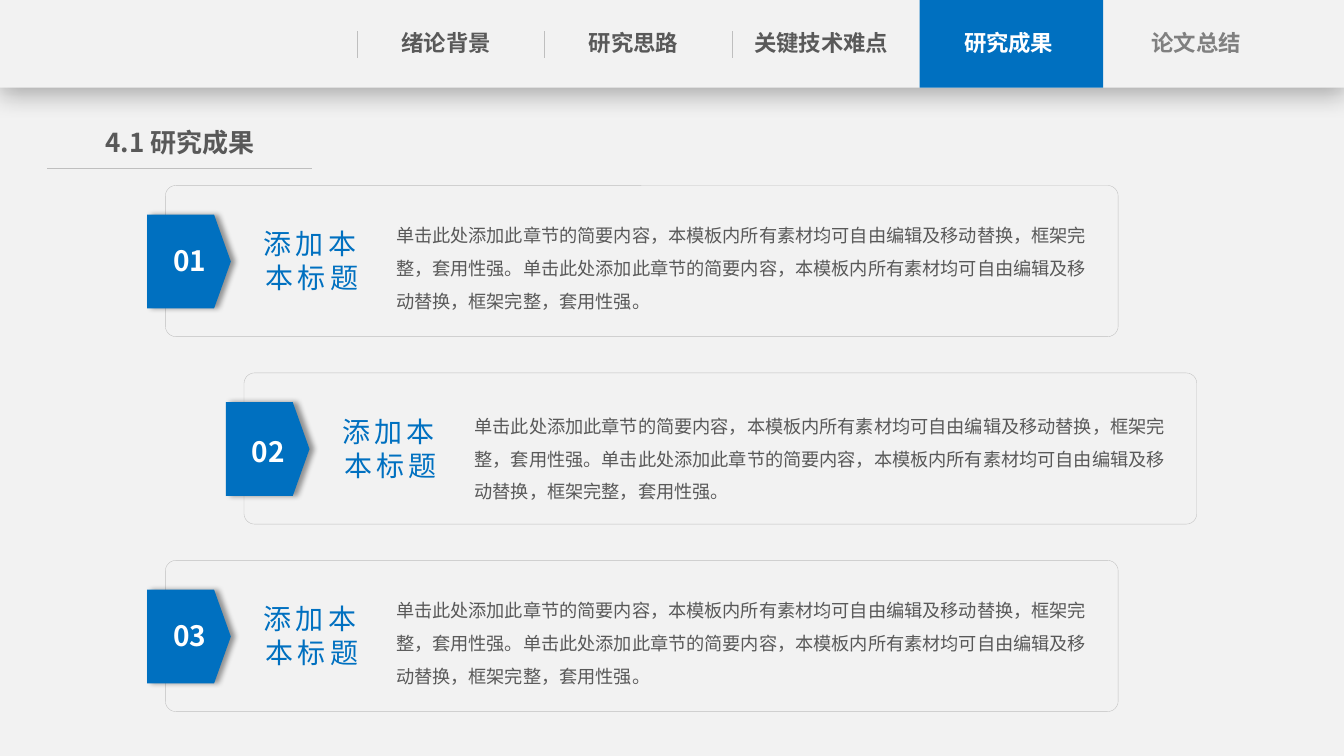
from dataclasses import dataclass

from lxml.etree import SubElement
from pptx import Presentation
from pptx.dml.color import RGBColor
from pptx.enum.shapes import MSO_CONNECTOR, MSO_SHAPE
from pptx.enum.text import MSO_ANCHOR, PP_ALIGN
from pptx.oxml.ns import qn
from pptx.util import Inches, Pt


@dataclass(frozen=True)
class Theme:
    face: str = "Noto Sans CJK SC"
    back: str = "F2F2F2"
    blue: str = "0070C0"
    dark: str = "595959"
    gray: str = "808080"
    rule: str = "BFBFBF"
    white: str = "FFFFFF"
    nav: float = 16
    title: float = 18.6
    head: float = 20
    body: float = 13


THEME = Theme()
WIDE, HIGH = 13.33, 7.5
TABS = ["绪论背景", "研究思路", "关键技术难点", "研究成果", "论文总结"]
ACTIVE = 3
HEAD = "添加本本标题"
BODY = "单击此处添加此章节的简要内容，本模板内所有素材均可自由编辑及移动替换，框架完整，套用性强。" * 2
# left, top, and how far the number and body sit lower
CARDS = [(1.64, 1.84, 0), (2.42, 3.7, 0.03), (1.64, 5.56, 0)]


def color(code):
    return RGBColor.from_string(code)


def add_box(shapes, kind, box, fill, line=None):
    shape = shapes.add_shape(kind, *map(Inches, box))
    shape.shadow.inherit = False
    shape.fill.solid()
    shape.fill.fore_color.rgb = color(fill)
    if line:
        shape.line.color.rgb = color(line)
        shape.line.width = Pt(0.25)
    else:
        shape.line.fill.background()
    return shape


def add_shadow(shape, alpha, blur, dist, angle):
    effects = shape._element.spPr.find(qn("a:effectLst"))
    outer = SubElement(effects, qn("a:outerShdw"), blurRad=str(Pt(blur)),
                       dist=str(Pt(dist)), dir=str(angle * 60000), rotWithShape="0")
    tint = SubElement(outer, qn("a:srgbClr"), val="000000")
    SubElement(tint, qn("a:alpha"), val=str(alpha * 1000))


def add_text(shapes, box, text, size, tint, bold=False, align=PP_ALIGN.CENTER, inset=0.1):
    """Add a one-paragraph text box and return its frame."""
    frame = shapes.add_textbox(*map(Inches, box)).text_frame
    frame.word_wrap = True
    frame.margin_left = frame.margin_right = Inches(inset)
    para = frame.paragraphs[0]
    para.text = text
    para.alignment = align
    font = para.font
    font.size, font.bold, font.name = Pt(size), bold, THEME.face
    font.color.rgb = color(tint)
    SubElement(font._element, qn("a:ea"), typeface=THEME.face)
    return frame


def add_rule(shapes, x1, y1, x2, y2):
    line = shapes.add_connector(MSO_CONNECTOR.STRAIGHT, *map(Inches, (x1, y1, x2, y2)))
    line.line.color.rgb = color(THEME.rule)
    line.line.width = Pt(0.5)
    SubElement(line._element.spPr, qn("a:effectLst"))


def add_nav(shapes, box):
    left, top, width, height = box
    bar = add_box(shapes, MSO_SHAPE.RECTANGLE, box, THEME.back)
    add_shadow(bar, 29, 18, 4, 90)
    first, step, wide = left + 3.69, 1.86, 1.47
    add_box(shapes, MSO_SHAPE.RECTANGLE,
            (first + ACTIVE * step - 0.15, top, 1.82, height), THEME.blue)
    for i, tab in enumerate(TABS):
        x = first + i * step
        tint = (THEME.dark if i < ACTIVE else
                THEME.white if i == ACTIVE else THEME.gray)
        add_text(shapes, (x, top + 0.24, wide, 0.38), tab, THEME.nav, tint, True, inset=0)
        if i < ACTIVE:
            add_rule(shapes, x - 0.15, top + 0.31, x - 0.15, top + 0.58)


def add_title(shapes, box):
    left, top, width, height = box
    add_text(shapes, (left + 0.28, top, 2.07, 0.42), "4.1 研究成果",
             THEME.title, THEME.dark, True, inset=0)
    add_rule(shapes, left, top + height, left + width, top + height)


def add_card(shapes, box, number, drop):
    left, top, width, height = box
    parts = shapes.add_group_shape().shapes
    frame = add_box(parts, MSO_SHAPE.ROUNDED_RECTANGLE, box, THEME.back, THEME.rule)
    frame.adjustments[0] = 0.07
    tag = add_box(parts, MSO_SHAPE.FLOWCHART_OFFPAGE_CONNECTOR,
                  (left - 0.23, top + 0.34, 0.93, 0.83), THEME.blue)
    tag.rotation = 270
    add_shadow(tag, 40, 4, 3, 0)
    head = add_text(parts, (left + 0.72, top + 0.33, 1.47, 0.83), HEAD, THEME.head, THEME.blue)
    head.vertical_anchor = MSO_ANCHOR.MIDDLE
    head.paragraphs[0].font._element.set("spc", "300")
    body = add_text(parts, (left + 2.19, top + 0.23 + drop, 7.1, 1.08), BODY,
                    THEME.body, THEME.dark, align=PP_ALIGN.LEFT)
    body.paragraphs[0].line_spacing = 1.5
    add_text(parts, (left - 0.12, top + 0.53 + drop, 0.72, 0.44), number,
             THEME.head, THEME.white, True)


def main():
    deck = Presentation()
    deck.slide_width, deck.slide_height = Inches(WIDE), Inches(HIGH)
    slide = deck.slides.add_slide(deck.slide_layouts[6])
    fill = slide.background.fill
    fill.solid()
    fill.fore_color.rgb = color(THEME.back)
    shapes = slide.shapes
    add_nav(shapes, (0, 0, WIDE, 0.87))
    add_title(shapes, (0.47, 1.21, 2.62, 0.46))
    for i, (left, top, drop) in enumerate(CARDS, 1):
        add_card(shapes, (left, top, 9.45, 1.5), f"{i:02}", drop)
    deck.save("out.pptx")


if __name__ == "__main__":
    main()
